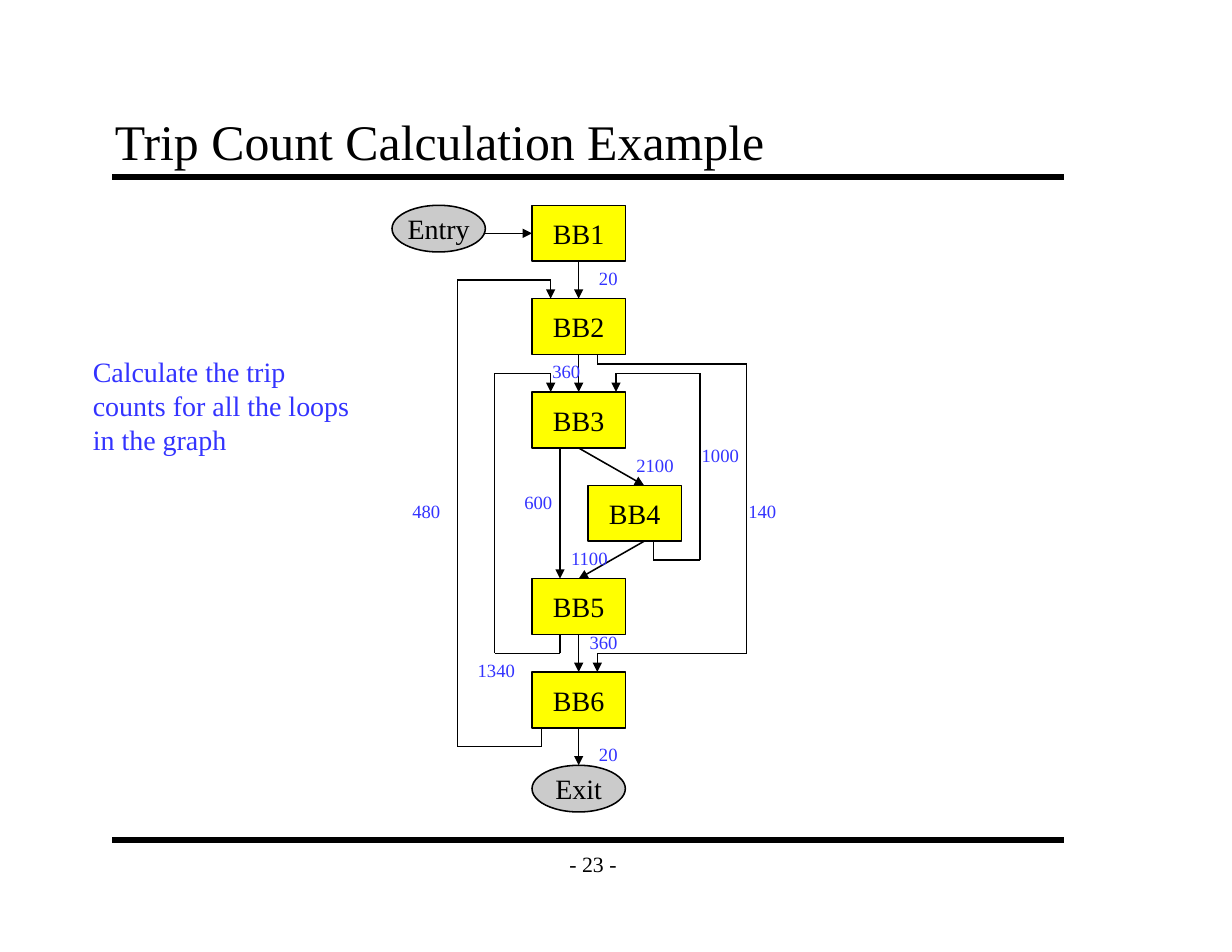
from typing import NamedTuple

from lxml import etree
from pptx import Presentation
from pptx.dml.color import RGBColor
from pptx.enum import shapes, text
from pptx.oxml.ns import qn
from pptx.util import Emu, Inches, Pt

FONT = "Times New Roman"
BLACK, BLUE, YELLOW, GRAY = "000000", "3333FF", "FFFF00", "CBCBCB"
NODE_W, BLOCK_H, OVAL_H = 10, 6, 5  # grid cells


class Node(NamedTuple):
    name: str
    col: float
    row: float
    oval: bool = False


class Edge(NamedTuple):
    points: list[tuple[float, float]]


class Count(NamedTuple):
    value: str
    col: float
    row: float


# The flow graph, on a grid of twelve cells to the inch
NODES = [
    Node("Entry", 42, 22, True),
    Node("BB1", 57, 22),
    Node("BB2", 57, 32),
    Node("BB3", 57, 42),
    Node("BB4", 63, 52),
    Node("BB5", 57, 62),
    Node("BB6", 57, 72),
    Node("Exit", 57, 82, True),
]
EDGES = [
    Edge([(52, 25), (57, 25)]),                                          # Entry to BB1
    *[Edge([(62, row), (62, row + 4)]) for row in (28, 38, 68, 78)],     # straight down
    Edge([(62, 48), (69, 52)]),                                          # BB3 to BB4
    Edge([(69, 58), (62, 62)]),                                          # BB4 to BB5
    Edge([(60, 48), (60, 62)]),                                          # BB3 to BB5
    Edge([(60, 68), (60, 70), (53, 70), (53, 40), (59, 40), (59, 42)]),  # BB5 back to BB3
    Edge([(64, 38), (64, 39), (80, 39), (80, 70), (64, 70), (64, 72)]),  # BB2 to BB6
    Edge([(70, 58), (70, 60), (75, 60), (75, 40), (66, 40), (66, 42)]),  # BB4 back to BB3
    Edge([(58, 78), (58, 80), (49, 80), (49, 30), (59, 30), (59, 32)]),  # BB6 back to BB2
]
COUNTS = [
    Count("20", 63, 28), Count("360", 58, 38), Count("2100", 67, 48),
    Count("1000", 74, 47), Count("600", 55, 52), Count("480", 43, 53),
    Count("140", 79, 53), Count("1100", 60, 58), Count("360", 62, 67),
    Count("1340", 50, 70), Count("20", 63, 79),
]


def cells(n: float) -> Emu:
    return Inches(n / 12)


def rgb(color: str) -> RGBColor:
    return RGBColor.from_string(color)


def write(tf, content: str, *, size: float, color: str = BLACK, align=text.PP_ALIGN.LEFT,
          anchor=text.MSO_ANCHOR.TOP, wrap: bool = False, inset=(0.1, 0.05)) -> None:
    tf.text = content
    tf.word_wrap = wrap
    tf.vertical_anchor = anchor
    tf.margin_left = tf.margin_right = Inches(inset[0])
    tf.margin_top = tf.margin_bottom = Inches(inset[1])
    for p in tf.paragraphs:
        p.alignment = align
        for r in p.runs:
            r.font.name, r.font.size = FONT, Pt(size)
            r.font.color.rgb = rgb(color)


def add_text(slide, left: float, top: float, width: float, height: float,
             content: str, **fmt) -> None:
    sp = slide.shapes.add_textbox(Inches(left), Inches(top), Inches(width), Inches(height))
    write(sp.text_frame, content, **fmt)


def add_line(slide, start, end, *, width: float = 1, arrow: bool = False) -> None:
    ends = [cells(n) for n in (*start, *end)]
    sp = slide.shapes.add_connector(shapes.MSO_CONNECTOR.STRAIGHT, *ends)
    sp.line.color.rgb = rgb(BLACK)
    sp.line.width = Pt(width)
    if arrow:
        etree.SubElement(sp.line._get_or_add_ln(), qn("a:tailEnd"), type="triangle")
    etree.SubElement(sp._element.spPr, qn("a:effectLst"))


def add_node(slide, node: Node) -> None:
    kind = shapes.MSO_SHAPE.OVAL if node.oval else shapes.MSO_SHAPE.RECTANGLE
    height = OVAL_H if node.oval else BLOCK_H
    sp = slide.shapes.add_shape(kind, cells(node.col), cells(node.row),
                                cells(NODE_W), cells(height))
    sp.shadow.inherit = False
    sp.fill.solid()
    sp.fill.fore_color.rgb = rgb(GRAY if node.oval else YELLOW)
    sp.line.color.rgb = rgb(BLACK)
    sp.line.width = Pt(1)
    write(sp.text_frame, node.name, size=18, align=text.PP_ALIGN.CENTER,
          anchor=text.MSO_ANCHOR.MIDDLE)


def add_edge(slide, edge: Edge) -> None:
    last = len(edge.points) - 2
    for i, (start, end) in enumerate(zip(edge.points, edge.points[1:])):
        add_line(slide, start, end, arrow=i == last)


def main() -> None:
    prs = Presentation()
    prs.slide_width, prs.slide_height = Inches(11), Inches(8.5)
    slide = prs.slides.add_slide(prs.slide_layouts[5])

    # Title, rules and page number
    title = slide.shapes.title
    title.left, title.top = cells(11), cells(11)
    title.width, title.height = cells(102), cells(8)
    write(title.text_frame, "Trip Count Calculation Example", size=32, wrap=True,
          anchor=text.MSO_ANCHOR.BOTTOM, inset=(0.11, 0.06))
    title.text_frame.auto_size = text.MSO_AUTO_SIZE.NONE
    for row in (19, 90):
        add_line(slide, (12, row), (114, row), width=4)
    add_text(slide, 4.92, 7.5, 0.75, 0.42, "- 23 -", size=14, align=text.PP_ALIGN.CENTER,
             anchor=text.MSO_ANCHOR.MIDDLE, inset=(0.11, 0.06))

    # Flow graph with its edge counts
    for node in NODES:
        add_node(slide, node)
    for edge in EDGES:
        add_edge(slide, edge)
    for count in COUNTS:
        add_text(slide, count.col / 12, count.row / 12, 0.2 + 0.083 * len(count.value), 0.3,
                 count.value, size=12, color=BLUE)

    # Task
    add_text(slide, 0.73, 3.12, 2.49, 1,
             "Calculate the trip\ncounts for all the loops\nin the graph",
             size=18, color=BLUE)

    prs.save("out.pptx")


if __name__ == "__main__":
    main()
